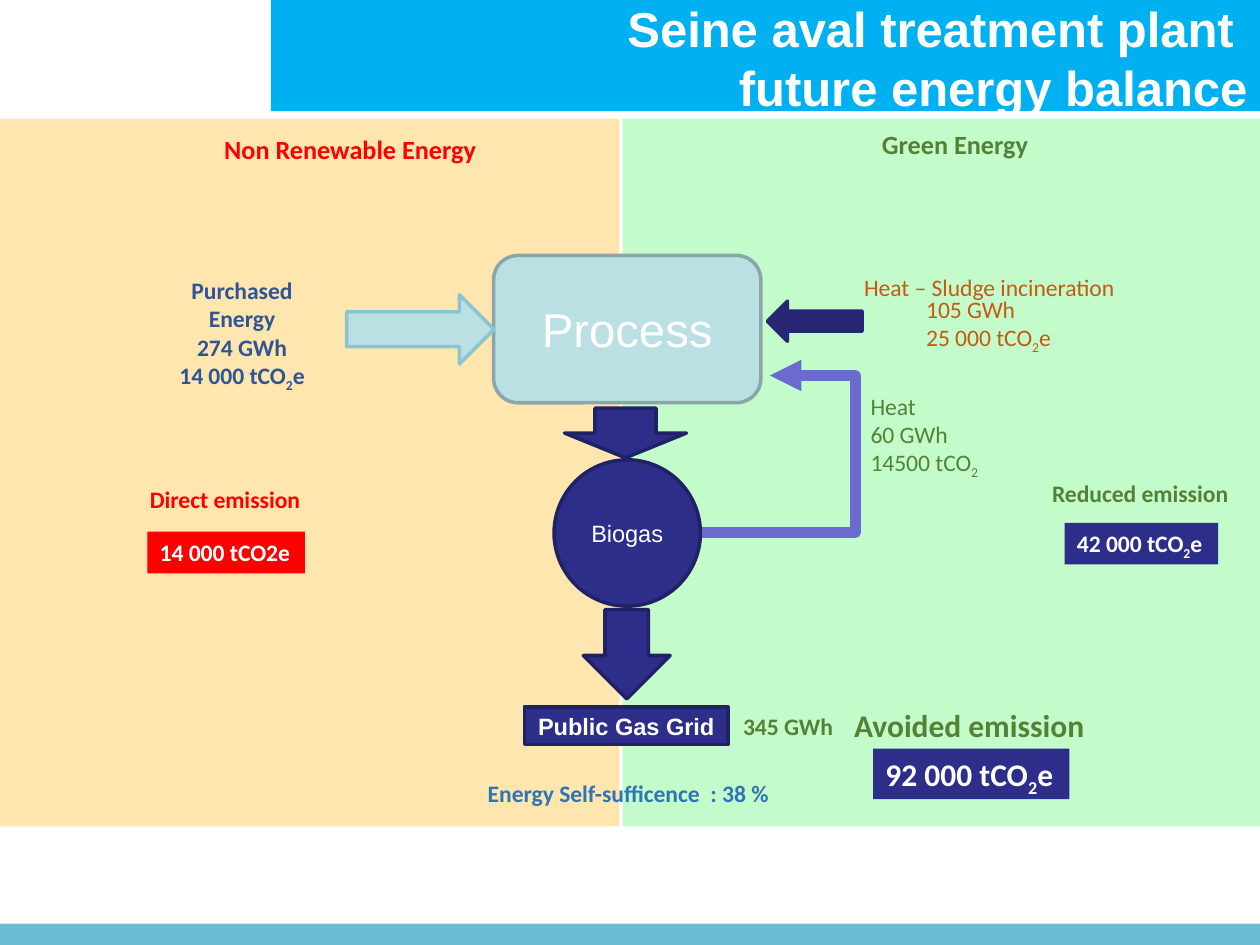
from dataclasses import dataclass
from typing import Optional

import pptx
import pptx.dml.color
import pptx.enum.shapes
import pptx.enum.text
import pptx.oxml
import pptx.oxml.ns
import pptx.util

Cm, Pt = pptx.util.Cm, pptx.util.Pt
RGBColor = pptx.dml.color.RGBColor
Shape = pptx.enum.shapes.MSO_SHAPE
Align = pptx.enum.text.PP_ALIGN
Anchor = pptx.enum.text.MSO_ANCHOR
AutoSize = pptx.enum.text.MSO_AUTO_SIZE

WHITE = RGBColor(0xFF, 0xFF, 0xFF)
RED = RGBColor(0xFF, 0x00, 0x00)
SKY = RGBColor(0x00, 0xB0, 0xF0)
FOOTER_BLUE = RGBColor(0x6C, 0xBD, 0xD4)
SAND = RGBColor(0xFF, 0xE5, 0xAE)
MINT = RGBColor(0xC3, 0xFB, 0xCA)
GREEN = RGBColor(0x54, 0x82, 0x35)
ORANGE = RGBColor(0xC5, 0x5A, 0x11)
BLUE = RGBColor(0x2F, 0x55, 0x97)
BRIGHT_BLUE = RGBColor(0x2E, 0x75, 0xB6)
PALE = RGBColor(0xBB, 0xE0, 0xE3)
PALE_EDGE = RGBColor(0x8A, 0xA6, 0xA8)
PALE_ARROW_EDGE = RGBColor(0x8A, 0xC6, 0xCD)
NAVY = RGBColor(0x2D, 0x2D, 0x8A)
NAVY_EDGE = RGBColor(0x21, 0x21, 0x66)
DARK_NAVY = RGBColor(0x26, 0x26, 0x73)
VIOLET = RGBColor(0x6B, 0x6B, 0xCF)

Box = tuple[float, float, float, float]  # left, top, width, height in cm


@dataclass
class Block:
    box: Box
    fill: RGBColor
    kind: int = Shape.RECTANGLE
    edge: Optional[RGBColor] = None
    text: str = ""
    size: float = 13.5
    bold: bool = False


@dataclass
class Label:
    box: Box
    text: str
    color: RGBColor
    size: float = 13.5
    bold: bool = True
    align: int = Align.LEFT
    fill: Optional[RGBColor] = None


PANELS = [
    Block((5.46, 0, 19.94, 2.24), SKY),
    Block((0, 18.62, 25.4, 0.43), FOOTER_BLUE),
    Block((-0.36, 2.39, 12.85, 14.27), SAND),
    Block((12.55, 2.39, 12.85, 14.27), MINT),
]
FLOW = [
    Block((9.95, 5.15, 5.39, 2.97), PALE, Shape.ROUNDED_RECTANGLE, PALE_EDGE, "Process", 27),
    Block((11.17, 9.27, 2.95, 2.95), NAVY, Shape.OVAL, NAVY_EDGE, "Biogas"),
    Block((6.99, 5.94, 2.97, 1.4), PALE, Shape.RIGHT_ARROW, PALE_ARROW_EDGE),
    Block((11.38, 8.23, 2.46, 1), NAVY, Shape.DOWN_ARROW, NAVY_EDGE),
    Block((15.47, 6.07, 1.91, 0.81), DARK_NAVY, Shape.LEFT_ARROW, DARK_NAVY),
    Block((11.76, 12.29, 1.75, 1.8), NAVY, Shape.DOWN_ARROW, NAVY_EDGE),
    Block((10.57, 14.25, 4.11, 0.76), NAVY, edge=NAVY_EDGE, text="Public Gas Grid", bold=True),
]
# Text between ~ marks is subscript.
LABELS = [
    Label((17.53, 2.46, 3.48, 0.89), "Green Energy", GREEN, 15),
    Label((4.27, 2.57, 5.64, 0.89), "Non Renewable Energy", RED, 15),
    Label((3.33, 5.44, 3.1, 2.57), "Purchased\nEnergy\n274 GWh\n14 000 tCO~2~e", BLUE,
          align=Align.CENTER),
    Label((18.42, 5.82, 3.1, 1.42), "105 GWh\n25 000 tCO~2~e", ORANGE, bold=False),
    Label((17.17, 5.38, 5.64, 0.84), "Heat – Sludge incineration", ORANGE, bold=False),
    Label((14.73, 14.22, 2.36, 0.84), "345 GWh", GREEN),
    Label((17.6, 15.09, 3.96, 1.02), "92 000 tCO~2~e", WHITE, 18, fill=NAVY),
    Label((16.97, 14.1, 5.18, 1.02), "Avoided emission", GREEN, 18),
    Label((21.46, 10.54, 3.1, 0.84), "42 000 tCO~2~e", WHITE, fill=NAVY),
    Label((20.96, 9.53, 4.11, 0.84), "Reduced emission", GREEN),
    Label((2.97, 10.72, 3.18, 0.84), "14 000 tCO2e", WHITE, fill=RED),
    Label((2.77, 9.65, 3.58, 0.84), "Direct emission", RED),
    Label((17.3, 7.77, 2.74, 1.98), "Heat\n60 GWh\n14500 tCO~2~", GREEN, bold=False),
    Label((9.53, 15.57, 6.27, 0.84), "Energy Self-sufficence  : 38 %", BRIGHT_BLUE,
          align=Align.CENTER),
]
HEAT_LOOP = [(14.15, 10.74), (17.25, 10.74), (17.25, 7.57), (15.52, 7.57)]


def set_font(p, name: str, size: float, color: RGBColor, bold: bool, align: int) -> None:
    p.alignment = align
    p.font.name, p.font.size, p.font.bold = name, Pt(size), bold
    p.font.color.rgb = color


def draw_block(shapes, block: Block) -> None:
    sp = shapes.add_shape(block.kind, *map(Cm, block.box))
    sp.shadow.inherit = False
    sp.fill.solid()
    sp.fill.fore_color.rgb = block.fill
    if block.edge is None:
        sp.line.fill.background()
    else:
        sp.line.color.rgb = block.edge
        sp.line.width = Pt(2)
    if block.text:
        tf = sp.text_frame
        tf.margin_left = tf.margin_right = Cm(0.18)
        tf.margin_top = tf.margin_bottom = Cm(0.1)
        tf.vertical_anchor = Anchor.MIDDLE
        tf.text = block.text
        set_font(tf.paragraphs[0], "Arial", block.size, WHITE, block.bold, Align.CENTER)


def draw_label(shapes, label: Label) -> None:
    sp = shapes.add_textbox(*map(Cm, label.box))
    if label.fill is not None:
        sp.fill.solid()
        sp.fill.fore_color.rgb = label.fill
    tf = sp.text_frame
    tf.word_wrap = False
    tf.auto_size = AutoSize.SHAPE_TO_FIT_TEXT
    for i, line in enumerate(label.text.split("\n")):
        p = tf.add_paragraph() if i else tf.paragraphs[0]
        set_font(p, "Calibri", label.size, label.color, label.bold, label.align)
        for j, part in enumerate(line.split("~")):
            if part:
                r = p.add_run()
                r.text = part
                if j % 2:
                    r.font._element.set("baseline", "-25000")


def draw_heat_loop(shapes) -> None:
    start, *rest = [(Cm(x), Cm(y)) for x, y in HEAT_LOOP]
    builder = shapes.build_freeform(*start)
    builder.add_line_segments(rest, close=False)
    sp = builder.convert_to_shape()
    sp.shadow.inherit = False
    sp.fill.background()
    sp.line.color.rgb = VIOLET
    sp.line.width = Pt(6)
    ns = pptx.oxml.ns.nsdecls("a")
    sp.line._get_or_add_ln().append(pptx.oxml.parse_xml(f'<a:tailEnd {ns} type="triangle"/>'))


def place_title(shapes) -> None:
    """Fill the title and bring it in front of the header band."""
    title = shapes.title
    title.left, title.top, title.width, title.height = map(Cm, (5.49, 0, 19.91, 2.31))
    tf = title.text_frame
    tf.auto_size = AutoSize.NONE
    tf.vertical_anchor = Anchor.MIDDLE
    tf.text = "Seine aval treatment plant \vfuture energy balance"
    set_font(tf.paragraphs[0], "Arial", 28, WHITE, True, Align.RIGHT)
    shapes._spTree.append(title._element)


def main() -> None:
    prs = pptx.Presentation()
    prs.slide_width, prs.slide_height = Cm(25.4), Cm(19.05)
    s = prs.slides.add_slide(prs.slide_layouts[5])
    for block in PANELS + FLOW:
        draw_block(s.shapes, block)
    for label in LABELS:
        draw_label(s.shapes, label)
    draw_heat_loop(s.shapes)
    place_title(s.shapes)
    prs.save("out.pptx")


if __name__ == "__main__":
    main()
